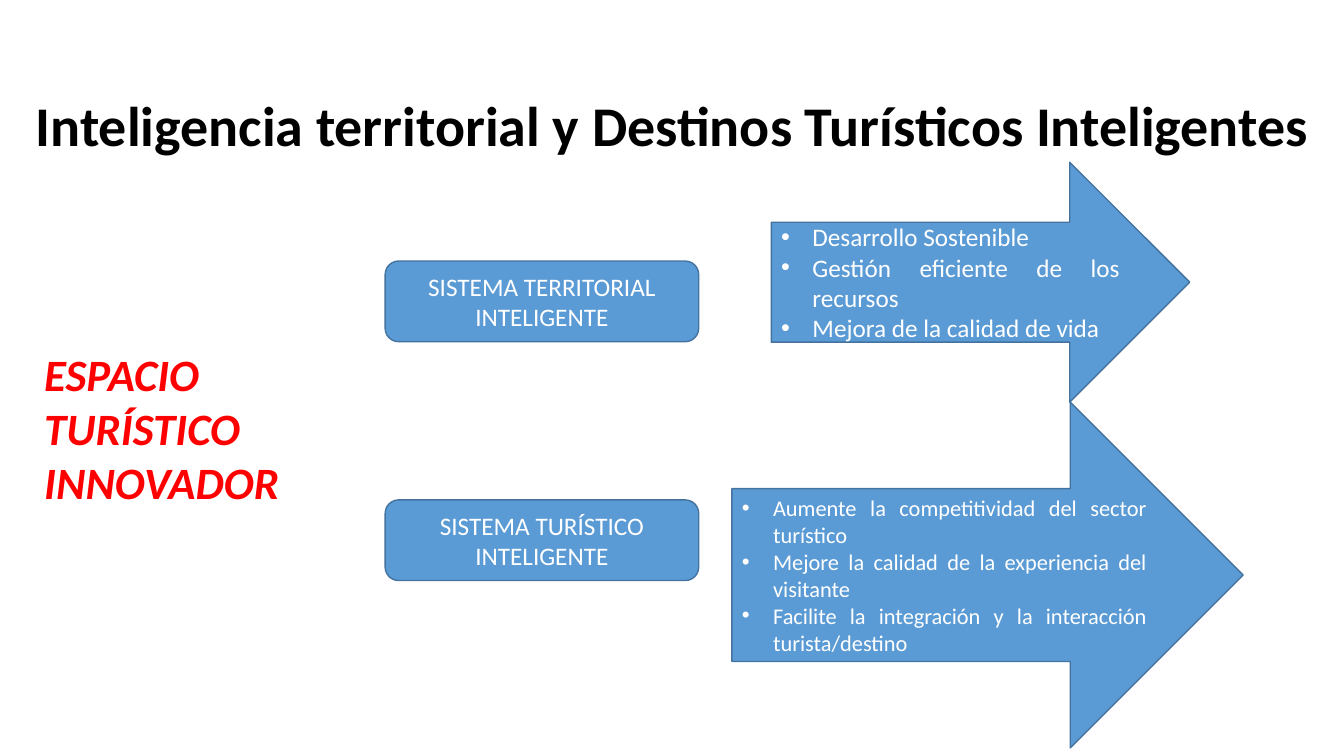
from dataclasses import dataclass

from lxml.etree import SubElement
from pptx import Presentation
from pptx.dml.color import RGBColor
from pptx.enum.shapes import MSO_SHAPE
from pptx.enum.text import MSO_ANCHOR, PP_ALIGN
from pptx.oxml.ns import qn
from pptx.text.text import TextFrame
from pptx.util import Emu, Pt

EMU_PER_PX = 9144  # 100 px to the inch
BULLET_INDENT = 31
COLORS = {
    "title": "000000",
    "accent": "FF0000",
    "fill": "5B9BD5",
    "outline": "43739E",
    "light": "FFFFFF",
}


@dataclass(frozen=True)
class Box:
    left: int
    top: int
    width: int
    height: int


@dataclass(frozen=True)
class TextStyle:
    size: int
    color: str
    align: PP_ALIGN = PP_ALIGN.LEFT
    bold: bool = False
    italic: bool = False
    bulleted: bool = False
    line_spacing: float = 1.0


@dataclass(frozen=True)
class Block:
    box: Box
    lines: tuple[str, ...]
    style: TextStyle
    preset: MSO_SHAPE | None = None
    anchor: MSO_ANCHOR = MSO_ANCHOR.MIDDLE


def px(length: int) -> Emu:
    return Emu(length * EMU_PER_PX)


def rgb(name: str) -> RGBColor:
    return RGBColor.from_string(COLORS[name])


def write_lines(frame: TextFrame, lines: tuple[str, ...], style: TextStyle) -> None:
    for index, line in enumerate(lines):
        paragraph = frame.add_paragraph() if index else frame.paragraphs[0]
        paragraph.text = line
        paragraph.alignment = style.align
        paragraph.line_spacing = style.line_spacing
        if style.bulleted:
            properties = paragraph._p.get_or_add_pPr()
            properties.set("marL", str(px(BULLET_INDENT)))
            properties.set("indent", str(-px(BULLET_INDENT)))
            SubElement(properties, qn("a:buFont"), typeface="Arial")
            SubElement(properties, qn("a:buChar"), char="•")
        font = paragraph.font
        font.name = "Calibri"
        font.size = Pt(style.size)
        font.bold = style.bold
        font.italic = style.italic
        font.color.rgb = rgb(style.color)


def draw_block(slide, block: Block) -> None:
    box = block.box
    place = px(box.left), px(box.top), px(box.width), px(box.height)
    if block.preset is None:
        shape = slide.shapes.add_textbox(*place)
    else:
        shape = slide.shapes.add_shape(block.preset, *place)
        shape.shadow.inherit = False
        shape.fill.solid()
        shape.fill.fore_color.rgb = rgb("fill")
        shape.line.color.rgb = rgb("outline")
        shape.line.width = Pt(1)
    frame = shape.text_frame
    frame.word_wrap = True
    frame.vertical_anchor = block.anchor
    write_lines(frame, block.lines, block.style)


SYSTEM_STYLE = TextStyle(18, "light", PP_ALIGN.CENTER)


def system(top: int, name: str) -> Block:
    return Block(Box(382, top, 311, 80), (name, "INTELIGENTE"), SYSTEM_STYLE,
                 MSO_SHAPE.ROUNDED_RECTANGLE)


def goals(box: Box, size: int, lines: tuple[str, ...]) -> Block:
    style = TextStyle(size, "light", PP_ALIGN.JUSTIFY, bulleted=True)
    return Block(box, lines, style, MSO_SHAPE.RIGHT_ARROW)


BLOCKS = (
    # Heading
    Block(Box(0, 55, 1333, 107),
          ("Inteligencia territorial y Destinos Turísticos Inteligentes",),
          TextStyle(40, "title", PP_ALIGN.CENTER, bold=True, line_spacing=0.9),
          anchor=MSO_ANCHOR.BOTTOM),
    # Innovative space
    Block(Box(34, 339, 259, 172), ("ESPACIO", "TURÍSTICO", "INNOVADOR"),
          TextStyle(32, "accent", bold=True, italic=True),
          anchor=MSO_ANCHOR.TOP),
    # Intelligent systems
    system(259, "SISTEMA TERRITORIAL"),
    system(496, "SISTEMA TURÍSTICO"),
    # Goals of each system
    goals(Box(765, 161, 415, 238), 18, (
        "Desarrollo Sostenible",
        "Gestión eficiente de los recursos",
        "Mejora de la calidad de vida",
    )),
    goals(Box(726, 399, 507, 343), 16, (
        "Aumente la competitividad del sector turístico",
        "Mejore la calidad de la experiencia del visitante",
        "Facilite la integración y la interacción turista/destino",
    )),
)


def main() -> None:
    presentation = Presentation()
    presentation.slide_width = px(1333)
    presentation.slide_height = px(750)
    slide = presentation.slides.add_slide(presentation.slide_layouts[6])
    for block in BLOCKS:
        draw_block(slide, block)
    presentation.save("out.pptx")


if __name__ == "__main__":
    main()
